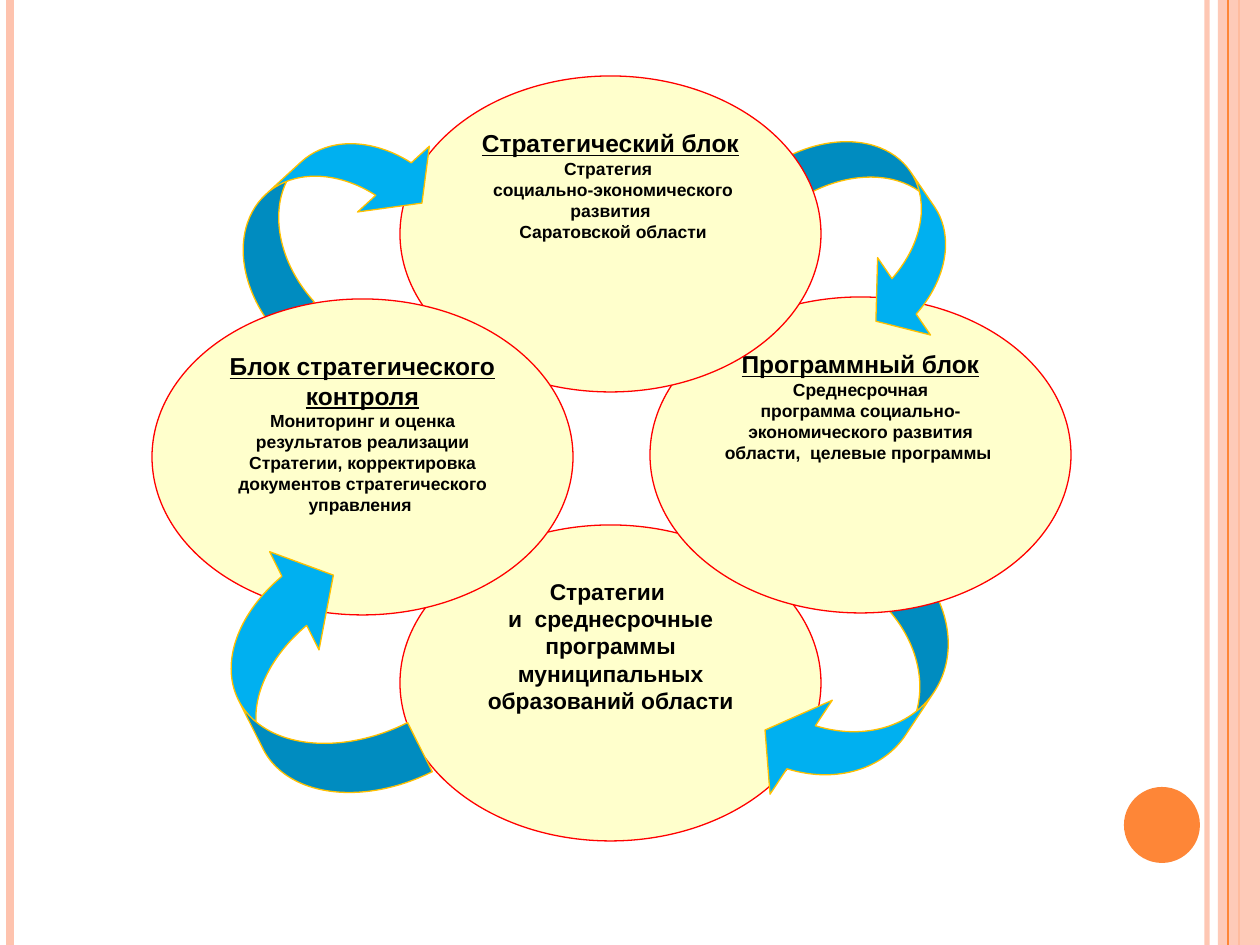
from lxml import etree
from pptx import Presentation
from pptx.dml.color import RGBColor
from pptx.enum.shapes import MSO_CONNECTOR, MSO_SHAPE
from pptx.enum.text import MSO_ANCHOR, PP_ALIGN
from pptx.oxml.ns import qn
from pptx.util import Pt

SCALE = 914400 / 126
BLACK = RGBColor(0x00, 0x00, 0x00)
PEACH = RGBColor(0xFE, 0xC3, 0xAE)
ORANGE = RGBColor(0xFE, 0x86, 0x37)
CREAM = RGBColor(0xFF, 0xFF, 0xCC)
RED = RGBColor(0xFF, 0x00, 0x00)
BLUE = RGBColor(0x00, 0xB0, 0xF0)
GOLD = RGBColor(0xFF, 0xC0, 0x00)
RECT = MSO_SHAPE.RECTANGLE
OVAL = MSO_SHAPE.OVAL
DOWN = MSO_SHAPE.CURVED_DOWN_ARROW
LEFT = MSO_SHAPE.CURVED_LEFT_ARROW
STRAIGHT = MSO_CONNECTOR.STRAIGHT
TOP = MSO_ANCHOR.TOP
CENTER = PP_ALIGN.CENTER
WIDE, HIGH = 1260, 945


def px(n):
    return round(n * SCALE)


def fade(item, part):
    for color in item._element.spPr.iter(qn("a:srgbClr")):
        etree.SubElement(color, qn("a:alpha"), val=str(part * 1000))


class Board:
    font = "Arial"
    edge = 0.75
    oval = (421, 316)

    def __init__(self, slide):
        self.shapes = slide.shapes

    def rule(self, x, color, width):
        line = self.shapes.add_connector(STRAIGHT, px(x), 0, px(x), px(HIGH))
        line.line.color.rgb = color
        line.line.width = Pt(width)
        etree.SubElement(line._element.spPr, qn("a:effectLst"))
        return line

    def shape(self, kind, box, fill, edge=None):
        item = self.shapes.add_shape(kind, *map(px, box))
        item.shadow.inherit = False
        item.fill.solid()
        item.fill.fore_color.rgb = fill
        if edge is None:
            item.line.fill.background()
        else:
            item.line.color.rgb = edge
            item.line.width = Pt(self.edge)
        return item

    def block(self, x, y, head, body, size=10):
        item = self.shape(OVAL, (x, y, *self.oval), CREAM, RED)
        frame = item.text_frame
        frame.word_wrap = True
        frame.vertical_anchor = TOP
        frame.text = "\n".join([head, *body] if head else body)
        for i, para in enumerate(frame.paragraphs):
            para.alignment = CENTER
            title = bool(head) and i == 0
            for run in para.runs:
                font = run.font
                font.name = self.font
                font.size = Pt(14 if title else size)
                font.bold = True
                font.underline = title
                font.color.rgb = BLACK

    def arrow(self, kind, box, turn, bends):
        item = self.shape(kind, box, BLUE, GOLD)
        item.rotation = turn
        for i, bend in enumerate(bends):
            item.adjustments[i] = bend


def main():
    deck = Presentation()
    deck.slide_width, deck.slide_height = px(WIDE), px(HIGH)
    board = Board(deck.slides.add_slide(deck.slide_layouts[6]))

    fade(board.rule(1207, PEACH, 3), 93)
    board.rule(10, PEACH, 4.5)
    board.rule(1239, ORANGE, 1.5)
    fade(board.shape(RECT, (1218, 0, 42, HIGH), PEACH), 87)
    board.rule(1228, ORANGE, 0.75)
    board.shape(OVAL, (1124, 787, 76, 76), ORANGE)

    board.block(400, 525, None, [
        "Стратегии ",
        "и  среднесрочные программы муниципальных образований области",
    ], 13)
    board.arrow(DOWN, (721, 633, 281, 120), 123.5, (0.43, 0.94, 0.33))
    board.block(650, 297, "Программный блок", [
        "Среднесрочная",
        "программа социально-экономического развития области,  целевые программы ",
    ])
    board.arrow(DOWN, (766, 175, 234, 113), 55.6, (0.38, 0.83, 0.33))
    board.block(400, 76, "Стратегический блок", [
        "Стратегия ",
        " социально-экономического развития",
        " Саратовской области",
    ])
    board.arrow(DOWN, (209, 155, 243, 112), 317.5, (0.43, 0.87, 0.33))
    board.block(152, 299, "Блок стратегического контроля", [
        "Мониторинг и оценка результатов реализации Стратегии, "
        "корректировка документов стратегического управления ",
    ])
    board.arrow(LEFT, (237, 543, 141, 275), 153.3, (0.39, 0.78, 0.33))

    deck.save("out.pptx")


if __name__ == "__main__":
    main()
